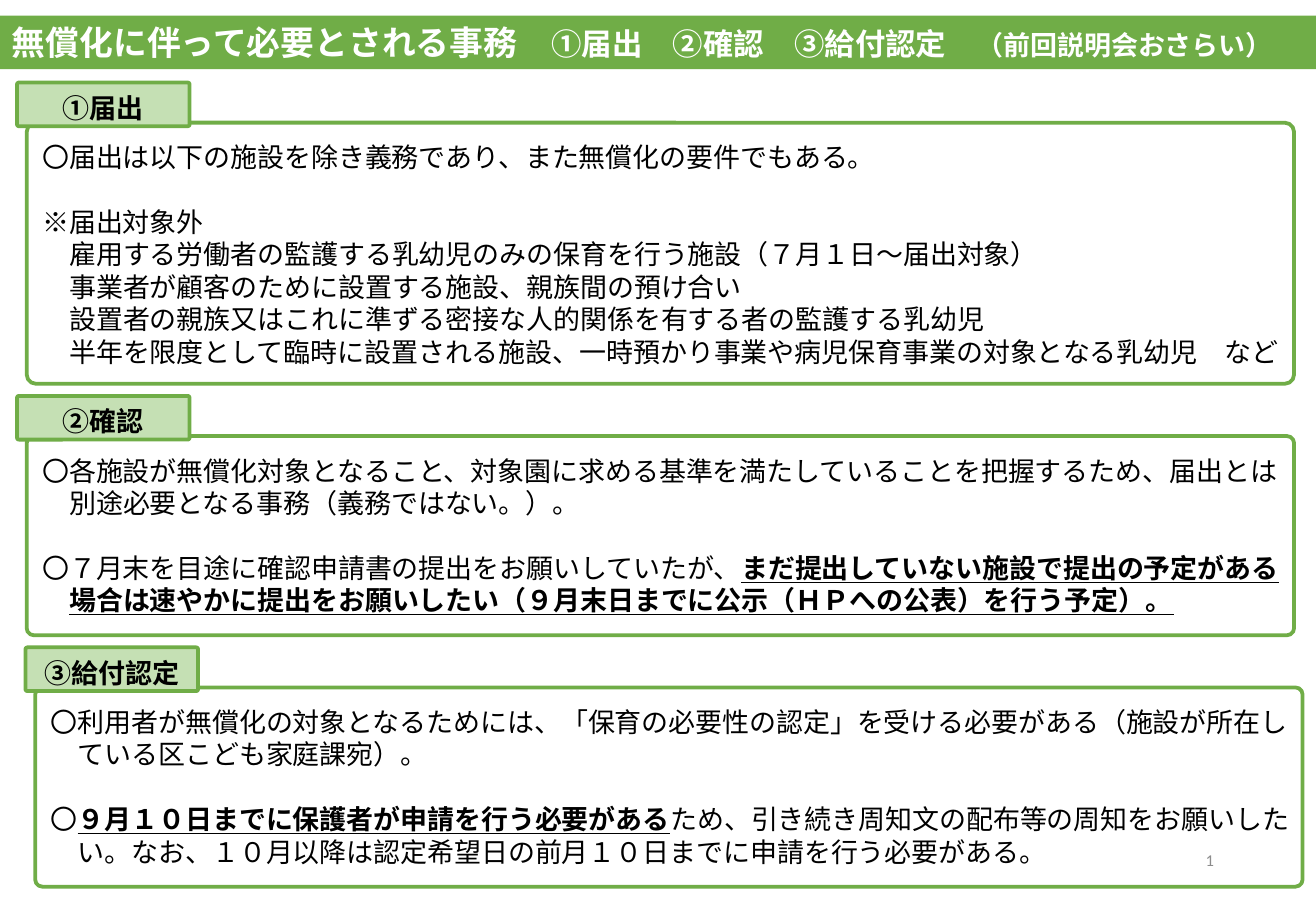
import pptx
import pptx.dml.color
import pptx.enum.shapes
import pptx.enum.text
import pptx.oxml
import pptx.util
from pptx.util import Inches

JAPANESE_FONT = "Noto Sans CJK JP"
GREEN = "70AD47"
PALE_GREEN = "C5E0B4"
BLACK = "000000"
WHITE = "FFFFFF"
GRAY = "8C8C8C"
BODY_SIZE = 16
LINE_PITCH = 19.2
ALIGN = pptx.enum.text.PP_ALIGN
MIDDLE = pptx.enum.text.MSO_ANCHOR.MIDDLE
SHAPE = pptx.enum.shapes.MSO_SHAPE


def line(*runs, indent=False, gap=False):
    return {"runs": runs, "indent": indent, "gap": gap}


def strong(text):
    return text, True


SECTIONS = [
    ("①届出", 0.14, 0.68, 2.15, [
        line("〇届出は以下の施設を除き義務であり、また無償化の要件でもある。"),
        line("※届出対象外", gap=True),
        line("雇用する労働者の監護する乳幼児のみの保育を行う施設（７月１日～届出対象）", indent=True),
        line("事業者が顧客のために設置する施設、親族間の預け合い", indent=True),
        line("設置者の親族又はこれに準ずる密接な人的関係を有する者の監護する乳幼児", indent=True),
        line("半年を限度として臨時に設置される施設、一時預かり事業や病児保育事業の対象となる乳幼児　など", indent=True),
    ]),
    ("②確認", 0.14, 3.26, 1.64, [
        line("〇各施設が無償化対象となること、対象園に求める基準を満たしていることを把握するため、届出とは"),
        line("別途必要となる事務（義務ではない。）。", indent=True),
        line("〇７月末を目途に確認申請書の提出をお願いしていたが、",
             strong("まだ提出していない施設で提出の予定がある"), gap=True),
        line(strong("場合は速やかに提出をお願いしたい（９月末日までに公示（ＨＰへの公表）を行う予定）。"), indent=True),
    ]),
    ("③給付認定", 0.21, 5.33, 1.64, [
        line("〇利用者が無償化の対象となるためには、「保育の必要性の認定」を受ける必要がある（施設が所在し"),
        line("ている区こども家庭課宛）。", indent=True),
        line("〇", strong("９月１０日までに保護者が申請を行う必要がある"),
             "ため、引き続き周知文の配布等の周知をお願いした", gap=True),
        line("い。なお、１０月以降は認定希望日の前月１０日までに申請を行う必要がある。", indent=True),
    ]),
]


def color(value):
    return pptx.dml.color.RGBColor.from_string(value)


def style_font(font, size, value, bold=False, name=JAPANESE_FONT):
    font.size = pptx.util.Pt(size)
    font.bold = bold
    font.color.rgb = color(value)
    font.name = name
    east_asian = pptx.oxml.parse_xml(
        '<a:ea xmlns:a="http://schemas.openxmlformats.org/drawingml/2006/main" '
        f'typeface="{name}"/>')
    font._rPr.append(east_asian)


def add_box(slide, kind, left, top, width, height, fill=None, outline=None, rounding=None):
    shape = slide.shapes.add_shape(kind, Inches(left), Inches(top), Inches(width), Inches(height))
    shape.shadow.inherit = False
    if rounding is not None:
        shape.adjustments[0] = rounding
    if fill:
        shape.fill.solid()
        shape.fill.fore_color.rgb = color(fill)
    else:
        shape.fill.background()
    if outline:
        shape.line.color.rgb = color(outline)
        shape.line.width = pptx.util.Pt(2.25)
    else:
        shape.line.fill.background()
    return shape


def add_text_box(slide, left, top, width, height):
    box = slide.shapes.add_textbox(Inches(left), Inches(top), Inches(width), Inches(height))
    box.text_frame.word_wrap = True
    return box.text_frame


def add_title(slide):
    banner = add_box(slide, SHAPE.RECTANGLE, 0, 0.13, 10.83, 0.44, fill=GREEN)
    banner.text_frame.vertical_anchor = MIDDLE
    paragraph = banner.text_frame.paragraphs[0]
    paragraph.alignment = ALIGN.LEFT
    for text, size in (("無償化に伴って必要とされる事務　", 20),
                       ("①届出　②確認　③給付認定　", 18),
                       ("（前回説明会おさらい）", 16)):
        run = paragraph.add_run()
        run.text = text
        style_font(run.font, size, WHITE, bold=True)


def add_heading(slide, text, left, top):
    tab = add_box(slide, SHAPE.ROUNDED_RECTANGLE, left, top, 1.42, 0.36,
                  fill=PALE_GREEN, outline=GREEN, rounding=0.042)
    frame = tab.text_frame
    frame.vertical_anchor = MIDDLE
    frame.margin_top = Inches(0.1)
    paragraph = frame.paragraphs[0]
    paragraph.text = text
    paragraph.alignment = ALIGN.CENTER
    style_font(paragraph.font, BODY_SIZE, BLACK, bold=True)


def add_body(slide, lines, left, top, height):
    frame = add_text_box(slide, left, top, 10.54, height)
    for index, content in enumerate(lines):
        paragraph = frame.add_paragraph() if index else frame.paragraphs[0]
        paragraph.line_spacing = pptx.util.Pt(LINE_PITCH)
        if content["gap"]:
            paragraph.space_before = pptx.util.Pt(LINE_PITCH)
        if content["indent"]:
            paragraph._p.get_or_add_pPr().set("marL", str(pptx.util.Pt(BODY_SIZE)))
        style_font(paragraph.font, BODY_SIZE, BLACK)
        for part in content["runs"]:
            text, emphasis = (part, False) if isinstance(part, str) else part
            run = paragraph.add_run()
            run.text = text
            if emphasis:
                run.font.bold = True
                run.font.underline = True


def add_section(slide, heading, left, top, height, lines):
    add_box(slide, SHAPE.ROUNDED_RECTANGLE, left + 0.08, top + 0.33, 10.43, height,
            outline=GREEN, rounding=0.036)
    add_heading(slide, heading, left, top)
    add_body(slide, lines, left + 0.11, top + 0.43, height - 0.1)


def add_page_number(slide):
    frame = add_text_box(slide, 7.65, 6.88, 2.44, 0.4)
    frame.vertical_anchor = MIDDLE
    paragraph = frame.paragraphs[0]
    paragraph.text = "1"
    paragraph.alignment = ALIGN.RIGHT
    style_font(paragraph.font, 9.8, GRAY, name="Calibri")


def main():
    presentation = pptx.Presentation()
    presentation.slide_width = Inches(10.83)
    presentation.slide_height = Inches(7.5)
    slide = presentation.slides.add_slide(presentation.slide_layouts[6])
    add_title(slide)
    for section in SECTIONS:
        add_section(slide, *section)
    add_page_number(slide)
    presentation.save("out.pptx")


if __name__ == "__main__":
    main()
